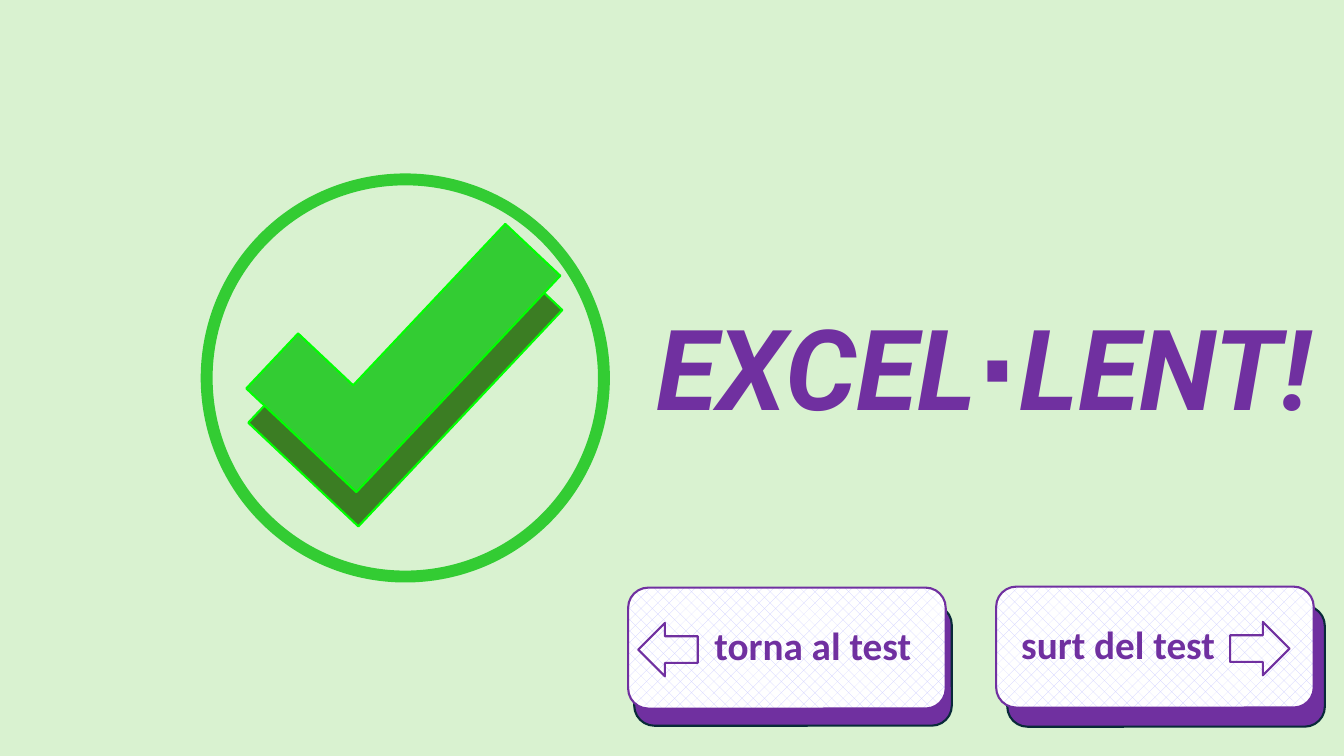
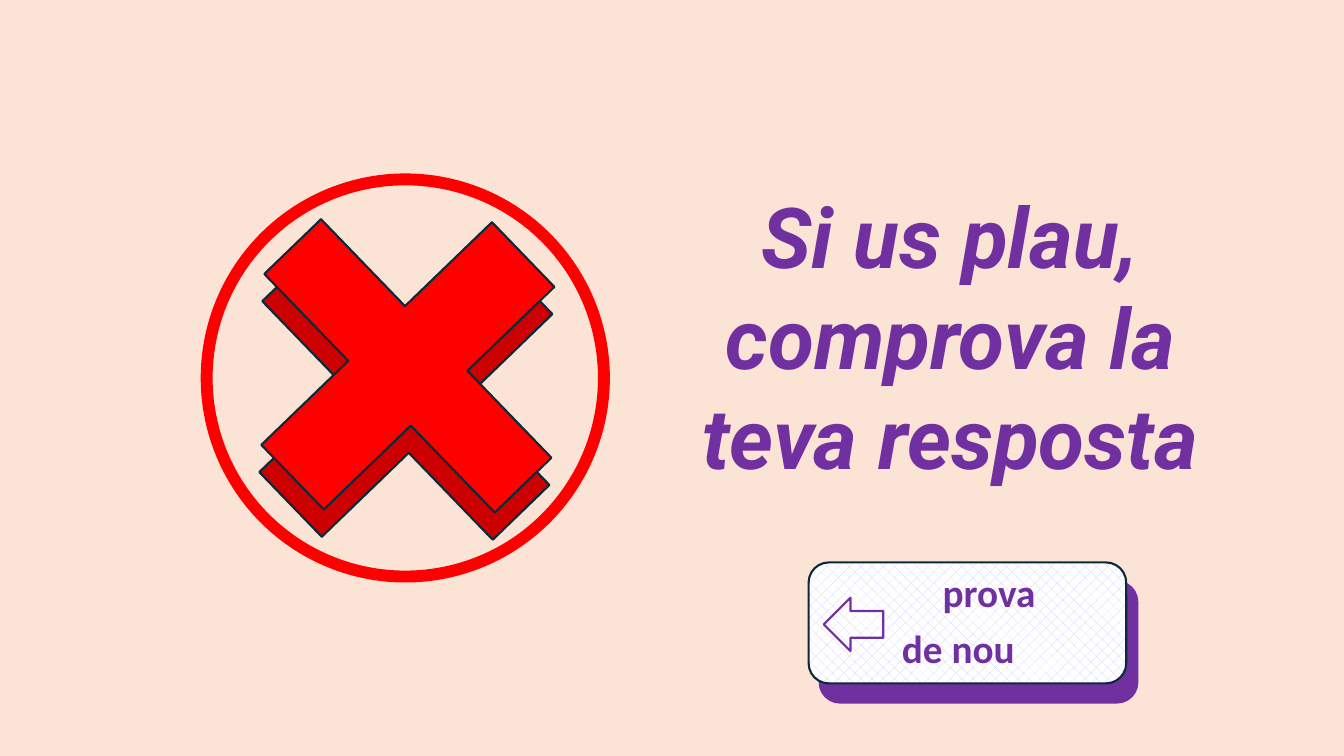
"""Build the two answer-feedback slides of a quiz."""
from dataclasses import dataclass

from pptx import Presentation
from pptx.dml.color import RGBColor
from pptx.enum.dml import MSO_PATTERN
from pptx.enum.shapes import MSO_SHAPE as SHAPE
from pptx.enum.text import MSO_ANCHOR, MSO_AUTO_SIZE, PP_ALIGN
from pptx.oxml.ns import qn
from pptx.util import Inches, Pt
from lxml.etree import SubElement

COLORS = {
    "purple": "7030A0", "navy": "092A39", "lilac": "CCCCFF", "white": "FFFFFF",
    "mint": "D9F2D0", "green": "33CC33", "moss": "3B7D23", "lime": "00FF00",
    "peach": "FBE3D6", "red": "FF0000", "crimson": "CC0000",
}
HEADING_FONT, DOT_FONT, BUTTON_FONT = "Roboto", "Noto Sans CJK JP", "Calibri"
BUTTON_W, BUTTON_H = 3.15, 1.2
ARROW_W, ARROW_H, ARROW_DROP = 0.59, 0.53, 0.35


@dataclass
class Heading:
    """Hold the lines of a heading, each one a tuple of runs."""
    box: tuple[float, float, float, float]
    size: int
    lines: tuple[tuple[str, ...], ...]


@dataclass
class Mark:
    """Hold a rotated cross, or a tick if no arm ratio is given, and its shade."""
    box: tuple[float, float, float, float]
    shade_offset: tuple[float, float]
    rotation: float
    fill: str
    shade: str
    line: str
    cross_ratio: float | None = None


@dataclass
class Button:
    """Hold a button face, its plate, its arrow and its indented lines."""
    left: float
    top: float
    plate_offset: tuple[float, float]
    face_line: str
    plate_line: str
    arrow: SHAPE
    arrow_left: float
    lines: tuple[tuple[str, float], ...]
    margins: tuple[float, float] = (0.1, 0.1)
    align: PP_ALIGN = PP_ALIGN.CENTER


@dataclass
class Feedback:
    """Hold everything that one slide shows."""
    background: str
    ring: str
    heading: Heading
    mark: Mark
    buttons: tuple[Button, ...]


SLIDES = (
    Feedback(
        "mint", "green",
        Heading((6.41, 2.91, 6.7, 1.45), 80, (("EXCEL", "∙", "LENT!"),)),
        Mark((3.25, 1.82, 1.5, 2.95), (0.02, 0.34), 43.3, "green", "moss", "lime"),
        (Button(6.23, 5.83, (0.06, 0.17), "purple", "navy", SHAPE.LEFT_ARROW, 0.1,
                (("torna al test", 0),), margins=(0.61, 0.1)),
         Button(9.88, 5.82, (0.11, 0.19), "purple", "navy", SHAPE.RIGHT_ARROW, 2.32,
                (("surt del test", 0),), margins=(0.19, 0.1), align=PP_ALIGN.LEFT)),
    ),
    Feedback(
        "peach", "red",
        Heading((6.65, 1.78, 5.55, 3.13), 60,
                (("Si us plau,",), ("comprova la",), ("teva resposta",))),
        Mark((2.4, 2.04, 3.29, 3.18), (-0.02, 0.27), 46, "red", "crimson", "navy",
             cross_ratio=0.377),
        (Button(8.02, 5.58, (0.11, 0.19), "navy", "purple", SHAPE.LEFT_ARROW, 0.15,
                (("prova", 0.61), ("de nou", 0)), margins=(0.1, 0.28)),),
    ),
)


def rgb(name: str) -> RGBColor:
    """Look up a named colour."""
    return RGBColor.from_string(COLORS[name])


def style_shape(sp, line: str, fill: str | None = None, width: float = 1.5) -> None:
    """Outline a shape, and fill it if a colour is named."""
    sp.shadow.inherit = False
    sp.line.color.rgb = rgb(line)
    sp.line.width = Pt(width)
    if fill:
        sp.fill.solid()
        sp.fill.fore_color.rgb = rgb(fill)
    else:
        sp.fill.background()


def add_shape(s, kind: SHAPE, box: tuple[float, ...], line: str,
              fill: str | None = None, width: float = 1.5):
    """Add a styled preset shape."""
    sp = s.shapes.add_shape(kind, *map(Inches, box))
    style_shape(sp, line, fill, width)
    return sp


def add_tick(s, box: tuple[float, ...], line: str, fill: str):
    """Add an upright tick whose arms are half as thick as the box is wide."""
    left, top, width, height = map(Inches, box)
    arm = width // 2
    builder = s.shapes.build_freeform(arm, 0)
    builder.add_line_segments([(width, 0), (width, height), (0, height),
                               (0, height - arm), (arm, height - arm)])
    sp = builder.convert_to_shape(left, top)
    style_shape(sp, line, fill)
    return sp


def format_run(r, font: str, size: int, italic: bool = False) -> None:
    """Give a run the bold purple style."""
    r.font.name = font
    r.font.size = Pt(size)
    r.font.bold = True
    r.font.italic = italic
    r.font.color.rgb = rgb("purple")
    SubElement(r.font._element, qn("a:ea")).set("typeface", font)


def add_heading(s, heading: Heading) -> None:
    """Add the large italic message."""
    tf = s.shapes.add_textbox(*map(Inches, heading.box)).text_frame
    tf.word_wrap = False
    tf.auto_size = MSO_AUTO_SIZE.SHAPE_TO_FIT_TEXT
    tf.text = "\n".join("" for _ in heading.lines)
    for p, parts in zip(tf.paragraphs, heading.lines):
        p.alignment = PP_ALIGN.CENTER
        for part in parts:
            r = p.add_run()
            r.text = part
            format_run(r, DOT_FONT if part == "∙" else HEADING_FONT,
                       heading.size, italic=True)


def add_mark(s, mark: Mark) -> None:
    """Add the symbol in front of its shade."""
    left, top, width, height = mark.box
    for (dx, dy), fill in ((mark.shade_offset, mark.shade), ((0, 0), mark.fill)):
        box = (left + dx, top + dy, width, height)
        if mark.cross_ratio is None:
            sp = add_tick(s, box, mark.line, fill)
        else:
            sp = add_shape(s, SHAPE.CROSS, box, mark.line, fill)
            sp.adjustments[0] = mark.cross_ratio
        sp.rotation = mark.rotation


def add_button(s, button: Button) -> None:
    """Add a plate, a patterned face with its text, and an arrow."""
    left, top = button.left, button.top
    dx, dy = button.plate_offset
    add_shape(s, SHAPE.ROUNDED_RECTANGLE, (left + dx, top + dy, BUTTON_W, BUTTON_H),
              button.plate_line, "purple")
    sp = add_shape(s, SHAPE.ROUNDED_RECTANGLE, (left, top, BUTTON_W, BUTTON_H),
                   button.face_line)
    sp.fill.patterned()
    sp.fill.pattern = MSO_PATTERN.PERCENT_25
    sp.fill.fore_color.rgb = rgb("lilac")
    sp.fill.back_color.rgb = rgb("white")
    tf = sp.text_frame
    tf.word_wrap = True
    tf.vertical_anchor = MSO_ANCHOR.MIDDLE
    tf.margin_left, tf.margin_right = map(Inches, button.margins)
    tf.text = "\n".join(text for text, _ in button.lines)
    for p, (_, indent) in zip(tf.paragraphs, button.lines):
        p.alignment = button.align
        p.line_spacing = 0.9
        p.space_before = Pt(10)
        p._p.get_or_add_pPr().set("marL", str(int(Inches(indent))))
        format_run(p.runs[0], BUTTON_FONT, 28)
    add_shape(s, button.arrow,
              (left + button.arrow_left, top + ARROW_DROP, ARROW_W, ARROW_H), "purple")


def add_feedback(prs, feedback: Feedback) -> None:
    """Add one feedback slide."""
    s = prs.slides.add_slide(prs.slide_layouts[6])
    s.background.fill.solid()
    s.background.fill.fore_color.rgb = rgb(feedback.background)
    add_shape(s, SHAPE.FLOWCHART_CONNECTOR, (2.05, 1.78, 3.94, 3.94),
              feedback.ring, width=8.5)
    add_mark(s, feedback.mark)
    add_heading(s, feedback.heading)
    for button in feedback.buttons:
        add_button(s, button)


def main() -> None:
    """Build and save the presentation."""
    prs = Presentation()
    prs.slide_width, prs.slide_height = Inches(13.33), Inches(7.5)
    for feedback in SLIDES:
        add_feedback(prs, feedback)
    prs.save("out.pptx")


if __name__ == "__main__":
    main()
